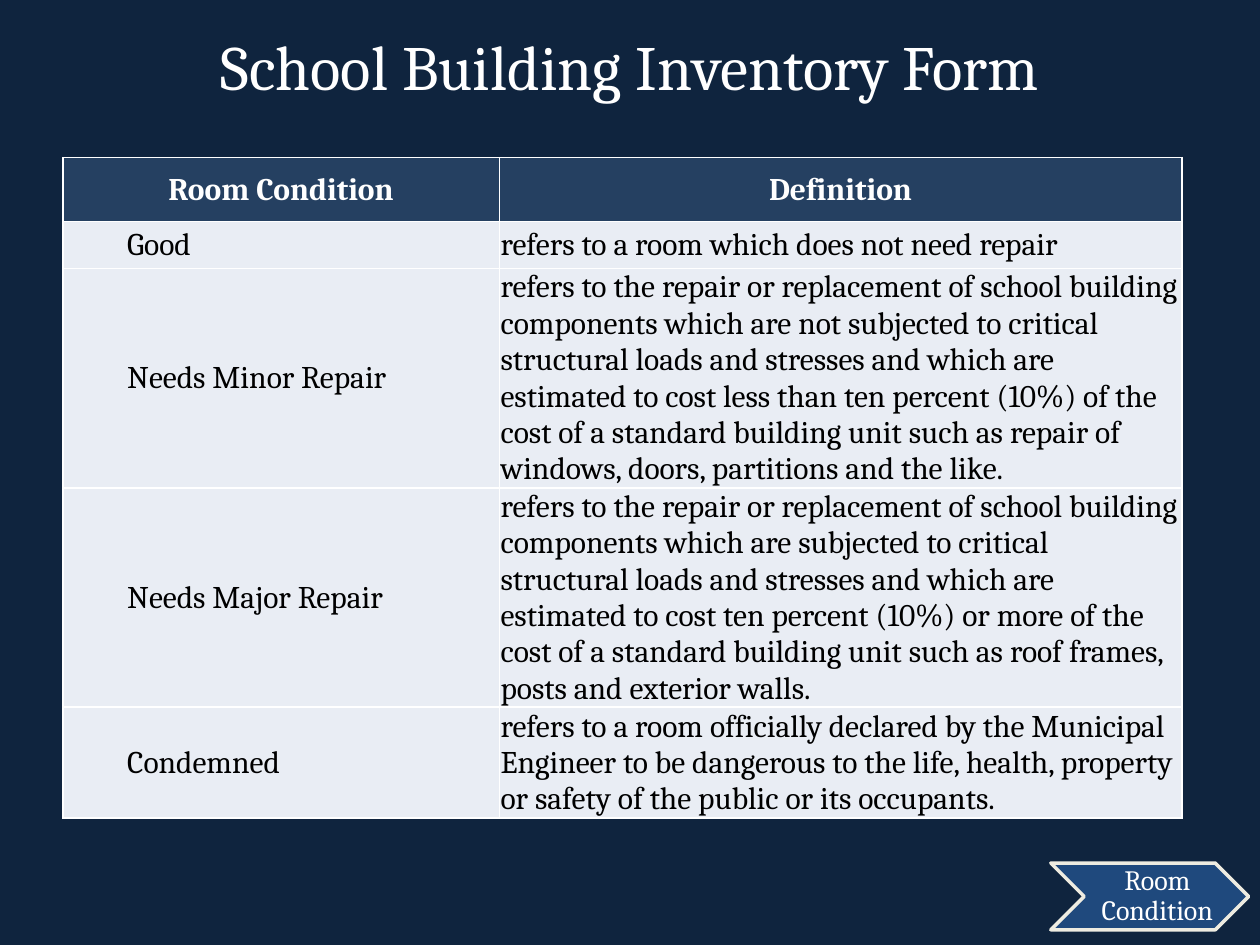
from pptx import Presentation
from pptx.dml.color import RGBColor
from pptx.enum.shapes import MSO_SHAPE as Shape
from pptx.enum.text import MSO_ANCHOR as Anchor, PP_ALIGN as Align
from pptx.oxml import parse_xml
from pptx.oxml.ns import nsdecls
from pptx.util import Inches, Pt

COLORS = {
    "background": "0F243E",
    "header": "254061",
    "body": "E9EDF4",
    "chevron": "1F497D",
    "outline": "EEECE1",
    "light": "FFFFFF",
    "dark": "000000",
}
FONT = "Cambria"
WIDTH, HEIGHT = 10, 7.5
COLUMN_SHARES = [0.39, 0.61]
ROW_HEIGHTS = [0.51, 0.37, 1.74, 1.74, 0.88]
HEADINGS = ("Room Condition", "Definition")
CONDITIONS = [
    ("Good", "refers to a room which does not need repair"),
    ("Needs Minor Repair",
     "refers to the repair or replacement of school building components which are not "
     "subjected to critical structural loads and stresses and which are estimated to cost "
     "less than ten percent (10%) of the cost of a standard building unit such as repair of "
     "windows, doors, partitions and the like."),
    ("Needs Major Repair",
     "refers to the repair or replacement of school building components which are subjected "
     "to critical structural loads and stresses and which are estimated to cost ten percent "
     "(10%) or more of the cost of a standard building unit such as roof frames, posts and "
     "exterior walls."),
    ("Condemned",
     "refers to a room officially declared by the Municipal Engineer to be dangerous to the "
     "life, health, property or safety of the public or its occupants."),
]


def color(name):
    return RGBColor.from_string(COLORS[name])


def write(frame, text, size, ink, align, bold=False):
    frame.text = text
    paragraph = frame.paragraphs[0]
    paragraph.alignment = align
    font = paragraph.runs[0].font
    font.name, font.size, font.bold = FONT, Pt(size), bold
    font.color.rgb = color(ink)
    return paragraph


def set_margins(holder, left, top, right, bottom):
    holder.margin_left, holder.margin_top = Inches(left), Inches(top)
    holder.margin_right, holder.margin_bottom = Inches(right), Inches(bottom)


def add_label(slide, box, text, size):
    label = slide.shapes.add_textbox(*map(Inches, box)).text_frame
    label.word_wrap = True
    label.vertical_anchor = Anchor.MIDDLE
    return label, write(label, text, size, "light", Align.CENTER)


def add_borders(cell):
    properties = cell._tc.get_or_add_tcPr()
    for position, side in enumerate(("lnL", "lnR", "lnT", "lnB")):
        properties.insert(position, parse_xml(
            f'<a:{side} {nsdecls("a")} w="12700"><a:solidFill>'
            f'<a:srgbClr val="{COLORS["light"]}"/></a:solidFill></a:{side}>'))


def add_condition_table(slide, box):
    rows = [HEADINGS, *CONDITIONS]
    table = slide.shapes.add_table(len(rows), len(HEADINGS), *map(Inches, box)).table
    for column, share in zip(table.columns, COLUMN_SHARES):
        column.width = Inches(box[2] * share)
    for r, (texts, height) in enumerate(zip(rows, ROW_HEIGHTS)):
        table.rows[r].height = Inches(height)
        heading = r == 0
        for c, text in enumerate(texts):
            cell = table.cell(r, c)
            set_margins(cell, 0.01, 0.01, 0.01, 0)
            cell.vertical_anchor = Anchor.MIDDLE
            cell.fill.solid()
            cell.fill.fore_color.rgb = color("header" if heading else "body")
            paragraph = write(cell.text_frame, text, 18, "light" if heading else "dark",
                              Align.CENTER if heading else Align.LEFT, heading)
            if c == 0 and not heading:
                paragraph._p.get_or_add_pPr().set("marL", str(Inches(0.5)))
            add_borders(cell)


def add_chevron_tag(slide, box, text):
    left, top, width, height = box
    chevron = slide.shapes.add_shape(Shape.CHEVRON, *map(Inches, box))
    chevron.shadow.inherit = False
    chevron.fill.solid()
    chevron.fill.fore_color.rgb = color("chevron")
    chevron.line.color.rgb = color("outline")
    chevron.line.width = Pt(2)
    label_box = (left + width * 0.13, top, width * 0.78, height)
    label, paragraph = add_label(slide, label_box, text, 16)
    set_margins(label, 0.1, 0.04, 0.04, 0.04)
    paragraph.line_spacing = 0.9


def main():
    deck = Presentation()
    deck.slide_width, deck.slide_height = Inches(WIDTH), Inches(HEIGHT)
    slide = deck.slides.add_slide(deck.slide_layouts[6])
    slide.background.fill.solid()
    slide.background.fill.fore_color.rgb = color("background")
    add_condition_table(slide, (0.5, 1.25, 8.88, sum(ROW_HEIGHTS)))
    add_label(slide, (0, 0, WIDTH, 1.04), "School Building Inventory Form", 36)
    add_chevron_tag(slide, (8.34, 6.85, 1.57, 0.53), "Room Condition")
    deck.save("out.pptx")


if __name__ == "__main__":
    main()
